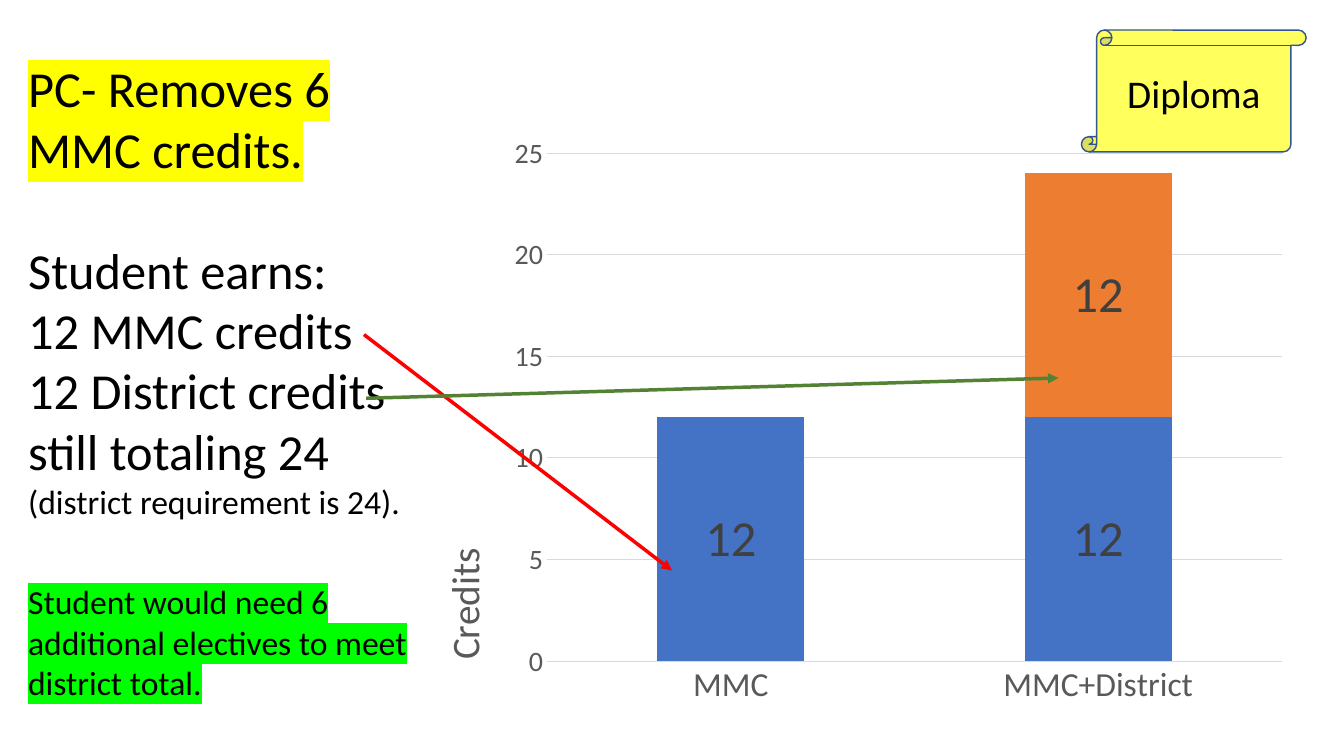
from pptx import Presentation
from pptx.chart.data import CategoryChartData
from pptx.dml.color import RGBColor
from pptx.enum.chart import XL_CHART_TYPE as CT, XL_LABEL_POSITION as LP, XL_TICK_MARK as TM
from pptx.enum.shapes import MSO_CONNECTOR as CN, MSO_SHAPE as SH
from pptx.enum.text import MSO_ANCHOR as VA, PP_ALIGN as AL
from pptx.oxml import parse_xml
from pptx.oxml.ns import nsdecls, qn
from pptx.util import Pt
from lxml.etree import SubElement

FONT = "Calibri"
COLORS = {
    "text": "000000", "axis": "595959", "grid": "D9D9D9", "label": "404040",
    "mmc": "4472C4", "district": "ED7D31", "removed": "FFFF00", "needed": "00FF00",
    "mmc_arrow": "FF0000", "district_arrow": "548235", "scroll": "FFFF00",
    "scroll_line": "325491",
}


def rgb(name):
    return RGBColor.from_string(COLORS[name])


def pts(*values):
    return [Pt(v) for v in values]


def set_font(font, size, color="text"):
    font.name = FONT
    font.size = Pt(size)
    font.color.rgb = rgb(color)


def add_run(p, text, size=36, highlight=None):
    r = p.add_run()
    r.text = text
    set_font(r.font, size)
    if highlight:
        mark = parse_xml(f'<a:highlight {nsdecls("a")}><a:srgbClr val="{COLORS[highlight]}"/></a:highlight>')
        r.font._element.find(qn("a:solidFill")).addnext(mark)


def place_layout(element, x, y, w=None, h=None):
    for old in element.findall(qn("c:layout")):
        element.remove(old)
    manual = '<c:layoutTarget val="inner"/>' if w else ""
    manual += '<c:xMode val="edge"/><c:yMode val="edge"/>'
    for tag, value in zip("xywh", (x, y, w, h)):
        if value is not None:
            manual += f'<c:{tag} val="{value}"/>'
    return parse_xml(f'<c:layout {nsdecls("c")}><c:manualLayout>{manual}</c:manualLayout></c:layout>')


def add_credit_chart(s, left, top, width, height):
    data = CategoryChartData()
    data.categories = ["MMC", "MMC+District"]
    data.add_series("Series 1", (12, 12))
    data.add_series("Series 2", (0, 12))
    chart = s.shapes.add_chart(CT.COLUMN_STACKED, *pts(left, top, width, height), data).chart
    chart.has_legend = chart.has_title = False
    set_font(chart.font, 10)
    plot = chart.plots[0]
    plot.gap_width, plot.overlap, plot.vary_by_categories = 150, 100, False
    for series, color in zip(plot.series, ("mmc", "district")):
        series.format.fill.solid()
        series.format.fill.fore_color.rgb = rgb(color)
        labels = series.data_labels
        labels.show_value = True
        labels.number_format, labels.number_format_is_linked = "0;;;", False
        labels.position = LP.CENTER
        set_font(labels.font, 36, "label")
    cat, val = chart.category_axis, chart.value_axis
    for axis, size in ((cat, 24), (val, 20)):
        axis.major_tick_mark = axis.minor_tick_mark = TM.NONE
        set_font(axis.tick_labels.font, size, "axis")
    val.minimum_scale, val.maximum_scale, val.major_unit = 0, 25, 5
    val.format.line.fill.background()
    for line in (cat.format.line, val.major_gridlines.format.line):
        line.color.rgb = rgb("grid")
        line.width = Pt(0.75)
    tf = val.axis_title.text_frame
    tf._txBody.bodyPr.set("rot", "-5400000")
    tf._txBody.bodyPr.set("vert", "horz")
    r = tf.paragraphs[0].add_run()
    r.text = "Credits"
    set_font(r.font, 28, "axis")
    r.font.bold = False
    title = val.axis_title._element
    layout = place_layout(title, 0.03, 0.7)
    title.find(qn("c:tx")).addnext(layout)
    area = plot._element.getparent()
    area.insert(0, place_layout(area, 0.16, 0.05, 0.82, 0.85))


def add_credit_notes(s, left, top, width, height):
    tf = s.shapes.add_textbox(*pts(left, top, width, height)).text_frame
    tf.word_wrap = True
    notes = (
        (0, [("PC- Removes 6 MMC credits.", 36, "removed")]),
        (43, [("Student earns:", 36)]),
        (0, [("12 MMC credits", 36)]),
        (0, [("12 District credits still totaling 24 ", 36), ("(district requirement is 24).", 24)]),
        (43, [("Student would need 6 additional electives to meet district total.", 24, "needed")]),
    )
    for i, (gap, runs) in enumerate(notes):
        p = tf.add_paragraph() if i else tf.paragraphs[0]
        p.space_before = Pt(gap)
        for run in runs:
            add_run(p, *run)


def add_arrow(s, color, *ends):
    cn = s.shapes.add_connector(CN.STRAIGHT, *pts(*ends))
    cn.line.color.rgb = rgb(color)
    cn.line.width = Pt(2.5)
    SubElement(cn.line._get_or_add_ln(), qn("a:tailEnd"), type="triangle")
    SubElement(cn._element.spPr, qn("a:effectLst"))


def add_diploma(s, left, top, width, height):
    sp = s.shapes.add_shape(SH.VERTICAL_SCROLL, *pts(left, top, width, height))
    sp.shadow.inherit = False
    sp.fill.solid()
    sp.fill.fore_color.rgb = rgb("scroll")
    SubElement(sp._element.spPr.find(f'{qn("a:solidFill")}/{qn("a:srgbClr")}'), qn("a:alpha"), val="63000")
    sp.line.color.rgb = rgb("scroll_line")
    sp.line.width = Pt(1)
    label_height = 41
    label = s.shapes.add_textbox(*pts(left + 11.5, top + (height - label_height) / 2 + 1.5,
                                      width - 23, label_height))
    tf = label.text_frame
    tf.word_wrap = True
    tf.vertical_anchor = VA.TOP
    p = tf.paragraphs[0]
    p.alignment = AL.CENTER
    add_run(p, "Diploma", 28)


def build_slide(prs):
    s = prs.slides.add_slide(prs.slide_layouts[6])
    add_credit_chart(s, 288.5, 88, 640, 427)
    add_credit_notes(s, 13, 37.5, 290, 472)
    add_arrow(s, "mmc_arrow", 260, 239, 480, 407.5)
    add_arrow(s, "district_arrow", 261.5, 284.5, 756, 270)
    add_diploma(s, 772.5, 21.5, 160.5, 87)


def main():
    prs = Presentation()
    prs.slide_width, prs.slide_height = pts(960, 540)
    build_slide(prs)
    prs.save("out.pptx")


if __name__ == "__main__":
    main()
